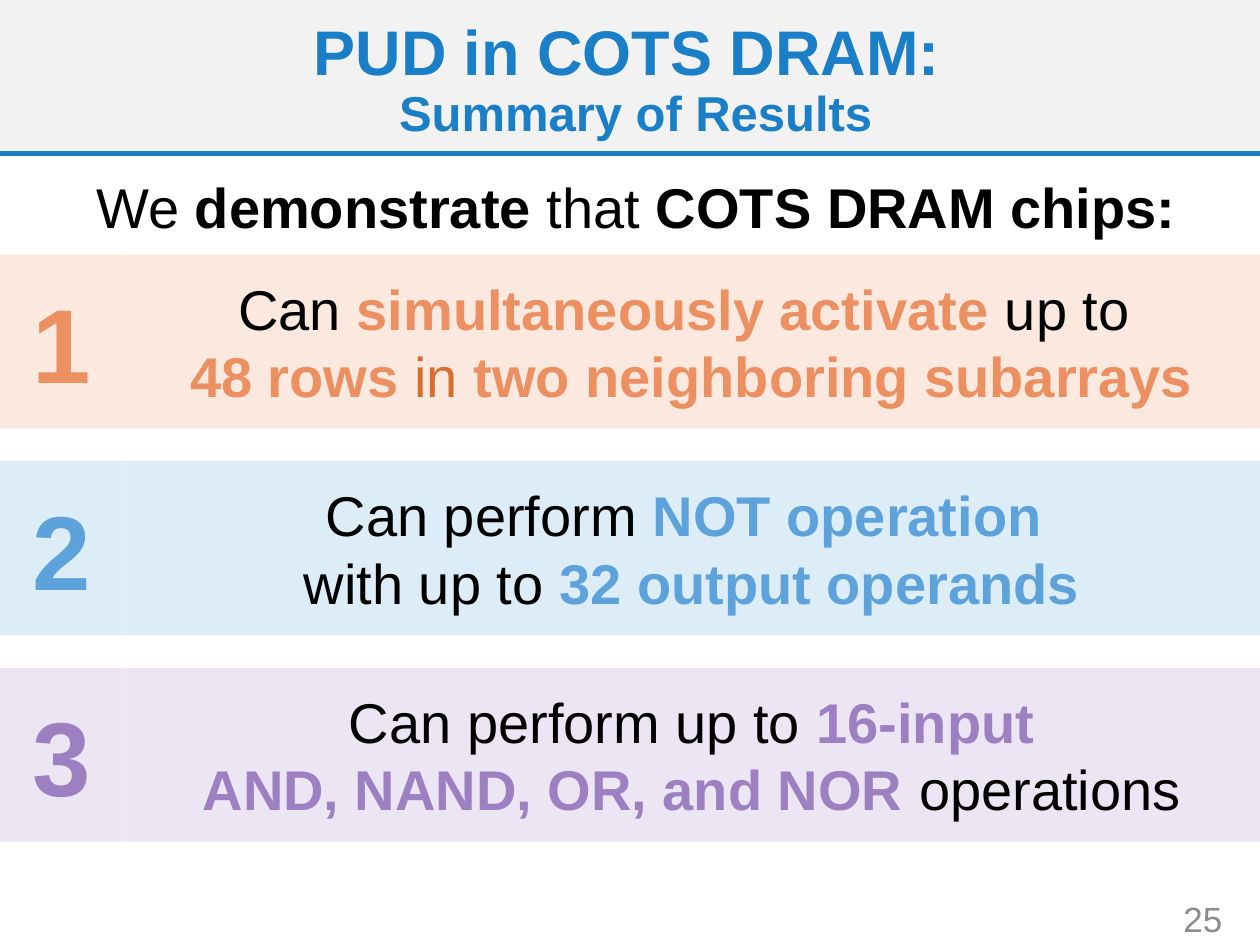
from lxml.etree import SubElement
from pptx import Presentation
from pptx.dml.color import RGBColor
from pptx.enum.shapes import MSO_CONNECTOR, MSO_SHAPE
from pptx.enum.text import MSO_ANCHOR, PP_ALIGN
from pptx.oxml.ns import qn
from pptx.util import Inches, Pt


def color(value):
    return RGBColor.from_string(value)


def add_block(left, top, width, height, lines, fill=None, align=PP_ALIGN.CENTER, spacing=1):
    place = [Inches(value) for value in (left, top, width, height)]
    if fill:
        box = slide.shapes.add_shape(MSO_SHAPE.RECTANGLE, *place)
        box.shadow.inherit = False
        box.fill.solid()
        box.fill.fore_color.rgb = color(fill)
        box.line.fill.background()
    else:
        box = slide.shapes.add_textbox(*place)
    frame = box.text_frame
    frame.word_wrap = True
    frame.vertical_anchor = MSO_ANCHOR.MIDDLE
    for index, line in enumerate(lines):
        para = frame.add_paragraph() if index else frame.paragraphs[0]
        para.alignment = align
        para.line_spacing = spacing
        for text, size, tint, bold in line:
            span = para.add_run()
            span.text = text
            span.font.name = "Arial"
            span.font.size = Pt(size)
            span.font.bold = bold
            span.font.color.rgb = color(tint)


BLACK, BLUE, GRAY = "000000", "1A7FC7", "8C8C8C"
ORANGE, RUST, SKY, PURPLE = "EC8F61", "D56F30", "5DA2DB", "9C80C2"

deck = Presentation()
deck.slide_width = Inches(10)
deck.slide_height = Inches(7.5)
slide = deck.slides.add_slide(deck.slide_layouts[6])

add_block(0, -0.01, 10, 1.24, [], fill="F2F2F2")
rule = slide.shapes.add_connector(
    MSO_CONNECTOR.STRAIGHT, Inches(0), Inches(1.22), Inches(10), Inches(1.22))
rule.line.color.rgb = color(BLUE)
rule.line.width = Pt(3)
SubElement(rule._element.spPr, qn("a:effectLst"))

title = [[("PUD in COTS DRAM: ", 36, BLUE, True)], [("Summary of Results", 28, BLUE, True)]]
add_block(0.18, 0.14, 9.73, 1.01, title, spacing=0.9)

intro = [("We ", 32, BLACK, False), ("demonstrate ", 32, BLACK, True),
         ("that", 32, BLACK, False), (" COTS DRAM chips:", 32, BLACK, True)]
add_block(0.05, 1.16, 10, 1.02, [intro], spacing=0.9)

results = [
    (ORANGE, "FBE9DF", [
        [("Can ", 32, BLACK, False), ("simultaneously activate ", 32, ORANGE, True),
         ("up to ", 32, BLACK, False)],
        [("48 rows ", 32, ORANGE, True), ("in ", 32, RUST, False),
         ("two neighboring subarrays", 32, ORANGE, True)]]),
    (SKY, "DDEDF8", [
        [("Can perform ", 32, BLACK, False), ("NOT operation ", 32, SKY, True)],
        [("with up to ", 32, BLACK, False), ("32 output operands", 32, SKY, True)]]),
    (PURPLE, "ECE5F3", [
        [("Can perform up to ", 32, BLACK, False), ("16-input", 32, PURPLE, True)],
        [("AND, NAND, OR, and NOR ", 32, PURPLE, True), ("operations", 32, BLACK, False)]]),
]
number_width = 0.98
for index, (accent, fill, lines) in enumerate(results):
    top = 2.02 + 1.64 * index
    add_block(number_width, top, 10 - number_width, 1.38, lines, fill)
    add_block(0, top, number_width, 1.38, [[(str(index + 1), 60, accent, True)]], fill)

add_block(8.72, 7.09, 1.08, 0.4, [[("25", 20, GRAY, False)]], align=PP_ALIGN.RIGHT)

deck.save("out.pptx")
